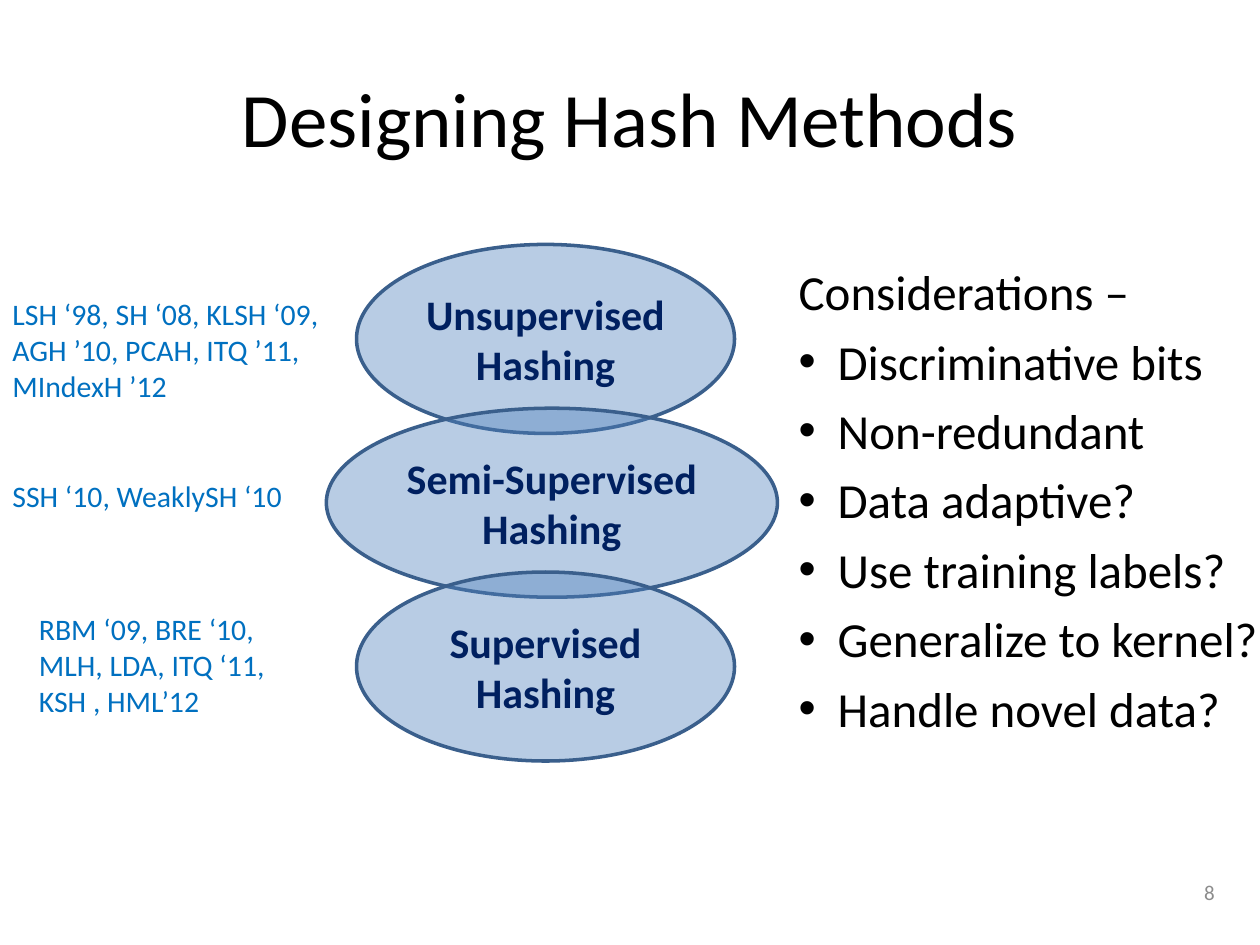
"""Build the slide on families of hash methods and their design considerations."""
from lxml import etree
from pptx import Presentation
from pptx.dml.color import RGBColor
from pptx.enum.shapes import MSO_SHAPE
from pptx.enum.text import MSO_ANCHOR, PP_ALIGN
from pptx.oxml.ns import qn
from pptx.util import Inches, Pt

OVAL = MSO_SHAPE.OVAL
MIDDLE, TOP = MSO_ANCHOR.MIDDLE, MSO_ANCHOR.TOP
LEFT, CENTER, RIGHT = PP_ALIGN.LEFT, PP_ALIGN.CENTER, PP_ALIGN.RIGHT
BLACK = RGBColor(0x00, 0x00, 0x00)
GRAY = RGBColor(0x8C, 0x8C, 0x8C)
NAVY = RGBColor(0x00, 0x20, 0x60)
BLUE = RGBColor(0x00, 0x70, 0xC0)
FILL = RGBColor(0x4F, 0x81, 0xBD)
OUTLINE = RGBColor(0x3A, 0x5F, 0x8C)
FONT = "Calibri"

TITLE = "Designing Hash Methods"
PAGE_NUMBER = "8"
FAMILIES = [
    {"name": "Unsupervised Hashing", "oval": (2.83, 3),
     "methods": ["LSH ‘98, SH ‘08, KLSH ‘09,\nAGH ’10, PCAH, ITQ ’11,\nMIndexH ’12"],
     "note": (0, 2.3, 2.65, 0.96)},
    {"name": "Semi-Supervised Hashing", "oval": (2.59, 3.58),
     "methods": ["SSH ‘10, WeaklySH ‘10"],
     "note": (0, 3.74, 2.36, 0.39)},
    {"name": "Supervised Hashing", "oval": (2.83, 3),
     "methods": ["RBM ‘09, BRE ‘10,", "MLH, LDA, ITQ ‘11, KSH , HML’12"],
     "note": (0.21, 4.8, 2.29, 0.96)},
]
HEADING = "Considerations –"
CONSIDERATIONS = [
    "Discriminative bits", "Non-redundant", "Data adaptive?",
    "Use training labels?", "Generalize to kernel?", "Handle novel data?",
]
OVAL_TOP, OVAL_HEIGHT, OVAL_STEP = 1.94, 1.5, 1.3
BULLET_INDENT = Inches(0.31)


def write(frame, lines, size, color, align=LEFT, bold=False, anchor=TOP):
    frame.word_wrap = True
    frame.vertical_anchor = anchor
    for index, line in enumerate(lines):
        para = frame.add_paragraph() if index else frame.paragraphs[0]
        para.text = line
        para.alignment = align
        font = para.font
        font.name, font.size, font.bold = FONT, Pt(size), bold
        font.color.rgb = color


def add_text(page, place, lines, size, color, **style):
    box = page.shapes.add_textbox(*map(Inches, place))
    write(box.text_frame, lines, size, color, **style)
    return box


def add_oval(page, place, name):
    oval = page.shapes.add_shape(OVAL, *map(Inches, place))
    oval.shadow.inherit = False
    oval.fill.solid()
    oval.fill.fore_color.rgb = FILL
    shade = oval.fill._xPr.find(qn("a:solidFill"))[0]
    etree.SubElement(shade, qn("a:alpha"), val="40000")
    oval.line.color.rgb = OUTLINE
    oval.line.width = Pt(2)
    write(oval.text_frame, [name], 24, NAVY, align=CENTER, bold=True, anchor=MIDDLE)


def add_bullet(para):
    properties = para._p.get_or_add_pPr()
    properties.set("marL", str(BULLET_INDENT))
    properties.set("indent", str(-BULLET_INDENT))
    font = etree.Element(qn("a:buFont"), typeface="Arial")
    mark = etree.Element(qn("a:buChar"), char="•")
    defaults = properties.find(qn("a:defRPr"))
    defaults.addprevious(font)
    defaults.addprevious(mark)


def main():
    deck = Presentation()
    deck.slide_width, deck.slide_height = Inches(10), Inches(7.5)
    page = deck.slides.add_slide(deck.slide_layouts[5])

    title = page.shapes.title
    title.left, title.top, title.width, title.height = map(Inches, (0.5, 0.3, 9, 1.25))
    write(title.text_frame, [TITLE], 44, BLACK, align=CENTER, anchor=MIDDLE)
    add_text(page, (7.41, 6.88, 2.33, 0.4), [PAGE_NUMBER], 12, GRAY,
             align=RIGHT, anchor=MIDDLE)

    for row, family in enumerate(FAMILIES):
        left, width = family["oval"]
        top = OVAL_TOP + row * OVAL_STEP
        add_oval(page, (left, top, width, OVAL_HEIGHT), family["name"])
        add_text(page, family["note"], family["methods"], 17, BLUE)

    box = add_text(page, (6.24, 2.03, 3.88, 3.9), [HEADING] + CONSIDERATIONS, 28, BLACK)
    box.text_frame.word_wrap = False
    for para in box.text_frame.paragraphs:
        para.space_before = Pt(6)
    for para in box.text_frame.paragraphs[1:]:
        add_bullet(para)

    deck.save("out.pptx")


if __name__ == "__main__":
    main()
